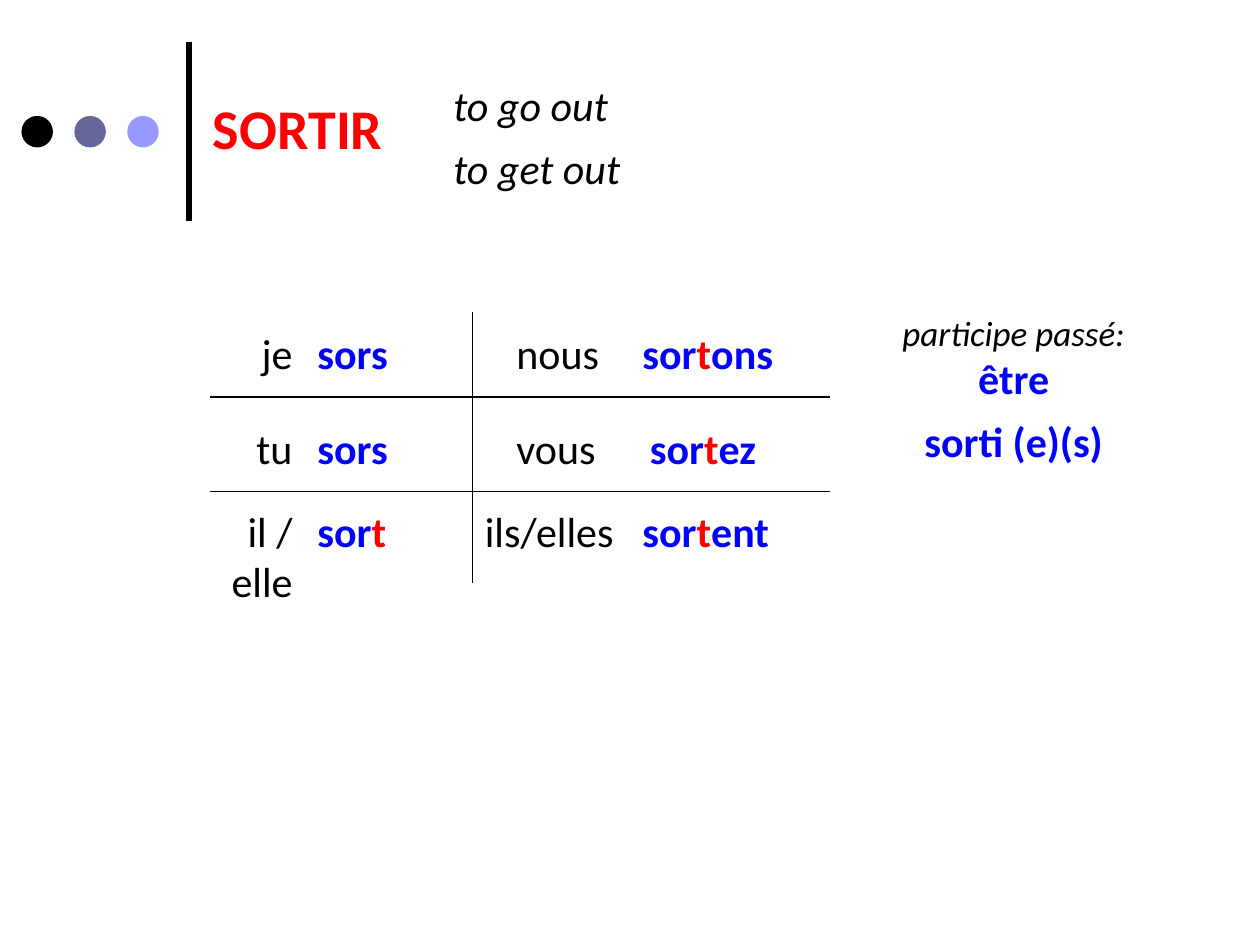
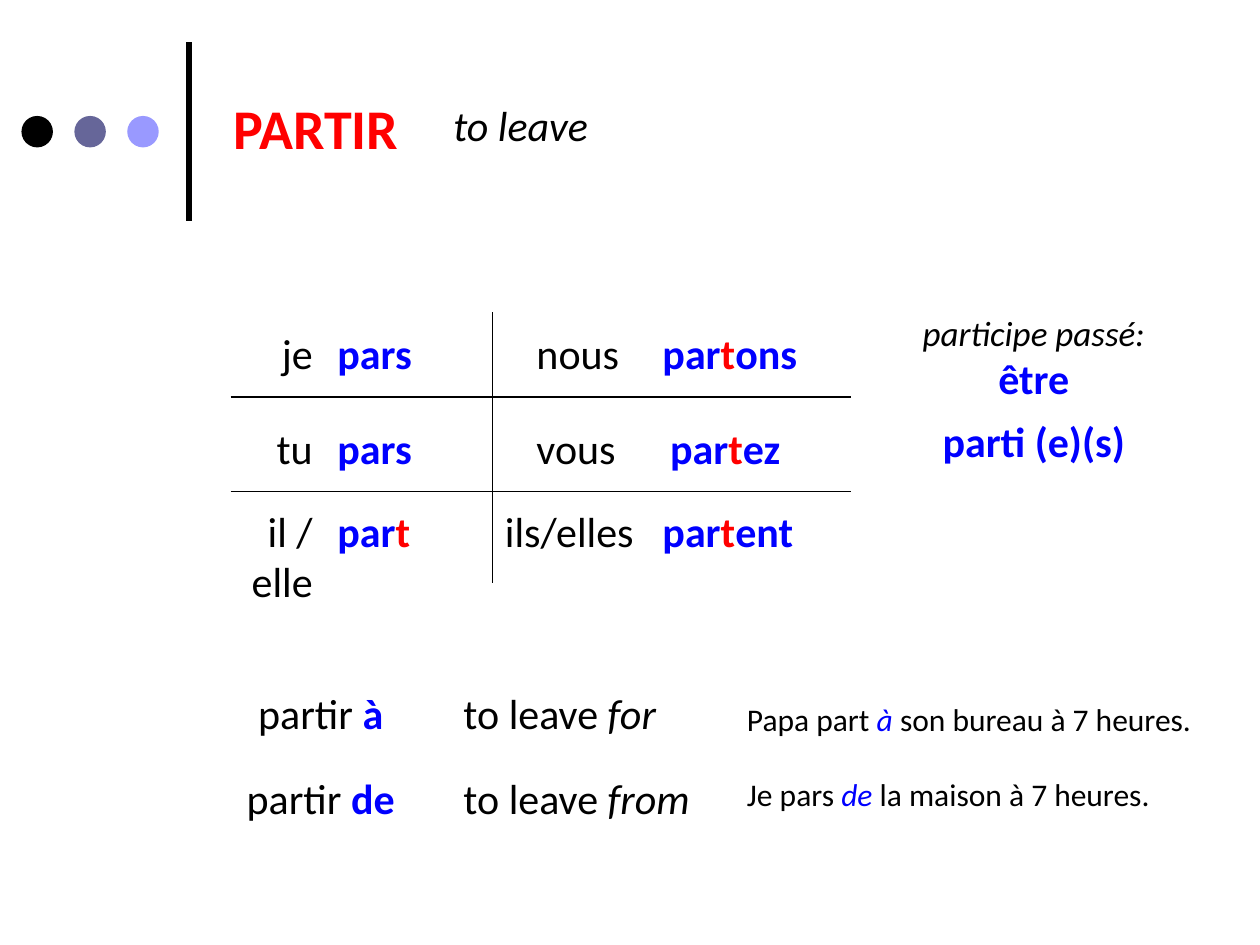
from pptx import Presentation
from pptx.dml.color import RGBColor
from pptx.enum.shapes import MSO_CONNECTOR, MSO_SHAPE
from pptx.enum.text import MSO_ANCHOR, MSO_AUTO_SIZE, PP_ALIGN
from pptx.oxml.ns import qn
from pptx.util import Inches, Pt

LEFT, CENTER, RIGHT = PP_ALIGN.LEFT, PP_ALIGN.CENTER, PP_ALIGN.RIGHT
TOP = MSO_ANCHOR.TOP
GROW = MSO_AUTO_SIZE.SHAPE_TO_FIT_TEXT
STRAIGHT = MSO_CONNECTOR.STRAIGHT
OVAL = MSO_SHAPE.OVAL

FONT = "Calibri"
COLORS = {
    "ink": "000000",
    "slate": "666699",
    "lilac": "9999FF",
    "verb": "0000FF",
    "accent": "FF0000",
}
ROW_TOPS = (2.55, 3.3, 3.96)
RULE_TOPS = (3.15, 3.9)
LINE_HEIGHT = 0.51

BLUE = {"color": "verb", "bold": True}
RED = {"color": "accent", "bold": True}
ITALIC = {"italic": True}
BLUE_ITALIC = {"color": "verb", "italic": True}


def rgb(name):
    return RGBColor.from_string(COLORS[name])


def write(frame, text, align=LEFT, **base):
    """Fill a frame with a string or a list of strings and (string, format) pairs."""
    frame.word_wrap = True
    frame.auto_size = GROW
    frame.vertical_anchor = TOP
    paragraph = frame.paragraphs[0]
    paragraph.alignment = align
    for part in [text] if isinstance(text, str) else text:
        words, extra = (part, {}) if isinstance(part, str) else part
        style = {"size": 24, "color": "ink", "bold": False, "italic": False, **base, **extra}
        run = paragraph.add_run()
        run.text = words
        run.font.name = FONT
        run.font.size = Pt(style["size"])
        run.font.bold = style["bold"]
        run.font.italic = style["italic"]
        run.font.color.rgb = rgb(style["color"])


class VerbDeck:
    def __init__(self):
        self.prs = Presentation()
        self.prs.slide_width = Inches(10)
        self.prs.slide_height = Inches(7.5)
        self.slide = None

    def line(self, x1, y1, x2, y2, weight=0.75):
        rule = self.slide.shapes.add_connector(
            STRAIGHT, Inches(x1), Inches(y1), Inches(x2), Inches(y2))
        rule.line.color.rgb = rgb("ink")
        rule.line.width = Pt(weight)
        properties = rule._element.spPr
        properties.append(properties.makeelement(qn("a:effectLst"), {}))

    def dot(self, x, y, size, color):
        dot = self.slide.shapes.add_shape(
            OVAL, Inches(x), Inches(y), Inches(size), Inches(size))
        dot.shadow.inherit = False
        dot.fill.solid()
        dot.fill.fore_color.rgb = rgb(color)
        dot.line.fill.background()

    def text(self, x, y, width, text, height=LINE_HEIGHT, **style):
        box = self.slide.shapes.add_textbox(
            Inches(x), Inches(y), Inches(width), Inches(height))
        write(box.text_frame, text, **style)

    def title(self, x, text):
        title = self.slide.shapes.title
        title.left, title.top = Inches(x), Inches(0.69)
        title.width, title.height = Inches(2.17), Inches(0.64)
        write(title.text_frame, text, size=32, **RED)

    def start_slide(self, left, verb, meanings):
        self.slide = self.prs.slides.add_slide(self.prs.slide_layouts[5])
        # Shared heading ornament
        self.line(1.5, 1.75, 1.5, 0.33, weight=3)
        for i, color in enumerate(("ink", "slate", "lilac")):
            self.dot(0.17 + 0.42 * i, 0.92, 0.25, color)
        # Verb and its meanings
        self.title(left - 0.08, verb)
        first_top = 0.58 if len(meanings) > 1 else 0.74
        for i, meaning in enumerate(meanings):
            self.text(3.5, first_top + 0.5 * i, 2.08, meaning, italic=True)

    def conjugation(self, left, stem):
        # Rules between persons, and between singular and plural
        for y in RULE_TOPS:
            self.line(left, y, left + 4.92, y)
        self.line(left + 2.08, 2.48, left + 2.08, 4.63)

        # Singular: pronouns end where the forms begin
        singular = (
            ("je", [stem + "s"]),
            ("tu", [stem + "s"]),
            ("il / elle", [stem, ("t", RED)]),
        )
        for y, (pronoun, form) in zip(ROW_TOPS, singular):
            self.text(left - 0.33, y, 1.08, pronoun, align=RIGHT)
            self.text(left + 0.75, y, 1.25, form, **BLUE)

        # Plural: pronoun offset, form offset
        plural = (
            ("nous", 2.33, "ons", 3.33),
            ("vous", 2.33, "ez", 3.39),
            ("ils/elles", 2.08, "ent", 3.33),
        )
        for y, (pronoun, pronoun_x, ending, form_x) in zip(ROW_TOPS, plural):
            self.text(left + pronoun_x, y, 1.33, pronoun)
            self.text(left + form_x, y, 2, [stem, ("t", RED), ending], **BLUE)

    def participle(self, left, participle):
        x, width = left + 5.25, 2.25
        self.text(x, 2.42, width, "participe passé:", height=0.44,
                  align=CENTER, size=20, italic=True)
        for y, word in ((2.75, "être"), (3.25, participle)):
            self.text(x, y, width, word, align=CENTER, **BLUE)

    def usage(self, y, example_y, preposition, english, example):
        self.text(1.42, y, 2.25, ["partir ", (preposition, BLUE)], align=CENTER)
        self.text(3.58, y, 2.25, ["to leave ", (english, ITALIC)])
        self.text(5.83, example_y, 4.08, example, height=0.4, size=18)


def main():
    deck = VerbDeck()
    verbs = (
        (1.67, "SORTIR", ("to go out", "to get out"), "sor", "sorti (e)(s)"),
        (1.83, "PARTIR", ("to leave",), "par", "parti (e)(s)"),
    )
    for left, verb, meanings, stem, participle in verbs:
        deck.start_slide(left, verb, meanings)
        deck.conjugation(left, stem)
        deck.participle(left, participle)

    # Prepositions used with partir, on the last slide
    deck.usage(5.41, 5.51, "à", "for",
               ["Papa part ", ("à ", BLUE_ITALIC), "son bureau à 7 heures."])
    deck.usage(6.08, 6.1, "de", "from",
               ["Je pars ", ("de", BLUE_ITALIC), " la maison à 7 heures."])

    deck.prs.save("out.pptx")


if __name__ == "__main__":
    main()
